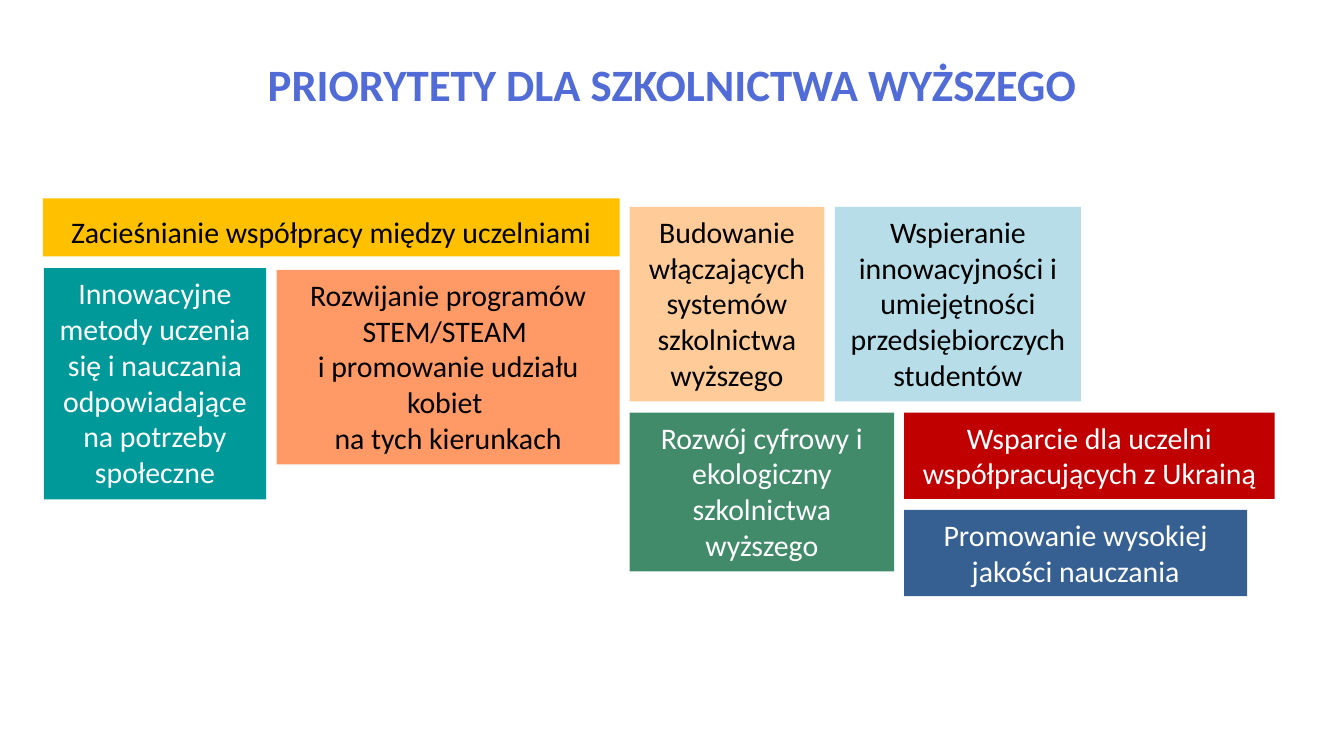
"""Build a slide of coloured tiles listing the priorities for higher education."""
import pptx
import pptx.dml.color
import pptx.enum.shapes
import pptx.enum.text
import pptx.util

Cm = pptx.util.Cm
ANCHOR = pptx.enum.text.MSO_ANCHOR

THEME = {
    "font": "Calibri", "title_size": 24, "body_size": 16,
    "title": "516BD7", "dark": "000000", "light": "FFFFFF",
    "yellow": "FFC000", "teal": "009999", "orange": "FF9966",
    "blue": "376092", "peach": "FFCC99", "green": "418B6A",
    "sky": "B7DEE8", "red": "C00000",
}


def rgb(name):
    return pptx.dml.color.RGBColor.from_string(THEME[name])


def add_text(sp, text, color="dark", size="body_size", bold=False, anchor=ANCHOR.TOP):
    tf = sp.text_frame
    tf.word_wrap = True
    tf.vertical_anchor = anchor
    p = tf.paragraphs[0]
    p.text = text
    p.alignment = pptx.enum.text.PP_ALIGN.CENTER
    for r in p.runs:
        r.font.name = THEME["font"]
        r.font.size = pptx.util.Pt(THEME[size])
        r.font.bold = bold
        r.font.color.rgb = rgb(color)


prs = pptx.Presentation()
prs.slide_width, prs.slide_height = Cm(25.4), Cm(14.29)
s = prs.slides.add_slide(prs.slide_layouts[6])

title = s.shapes.add_textbox(Cm(0.95), Cm(0.94), Cm(23.5), Cm(1.7))
add_text(title, "PRIORYTETY DLA SZKOLNICTWA WYŻSZEGO", color="title", size="title_size", bold=True)

tiles = [
    (0.81, 3.75, 10.9, 1.1, "yellow", "dark", ANCHOR.BOTTOM,
     "Zacieśnianie współpracy między uczelniami"),
    (0.83, 5.07, 4.2, 4.37, "teal", "light", ANCHOR.TOP,
     "Innowacyjne metody uczenia się i nauczania odpowiadające na potrzeby społeczne"),
    (5.23, 5.1, 6.48, 3.68, "orange", "dark", ANCHOR.TOP,
     "Rozwijanie programów STEM/STEAM \vi promowanie udziału kobiet \vna tych kierunkach"),
    (17.09, 9.64, 6.48, 1.63, "blue", "light", ANCHOR.TOP,
     "Promowanie wysokiej jakości nauczania"),
    (11.9, 3.91, 3.68, 3.68, "peach", "dark", ANCHOR.TOP,
     "Budowanie włączających systemów szkolnictwa wyższego"),
    (11.9, 7.8, 5, 3, "green", "light", ANCHOR.TOP,
     "Rozwój cyfrowy i ekologiczny szkolnictwa wyższego"),
    (15.78, 3.91, 4.65, 3.68, "sky", "dark", ANCHOR.TOP,
     "Wspieranie innowacyjności i umiejętności przedsiębiorczych studentów"),
    (17.09, 7.8, 7, 1.63, "red", "light", ANCHOR.TOP,
     "Wsparcie dla uczelni współpracujących z Ukrainą"),
]
for left, top, width, height, fill, color, anchor, text in tiles:
    sp = s.shapes.add_shape(pptx.enum.shapes.MSO_SHAPE.RECTANGLE,
                            Cm(left), Cm(top), Cm(width), Cm(height))
    sp.shadow.inherit = False
    sp.fill.solid()
    sp.fill.fore_color.rgb = rgb(fill)
    sp.line.fill.background()
    add_text(sp, text, color=color, anchor=anchor)

prs.save("out.pptx")
